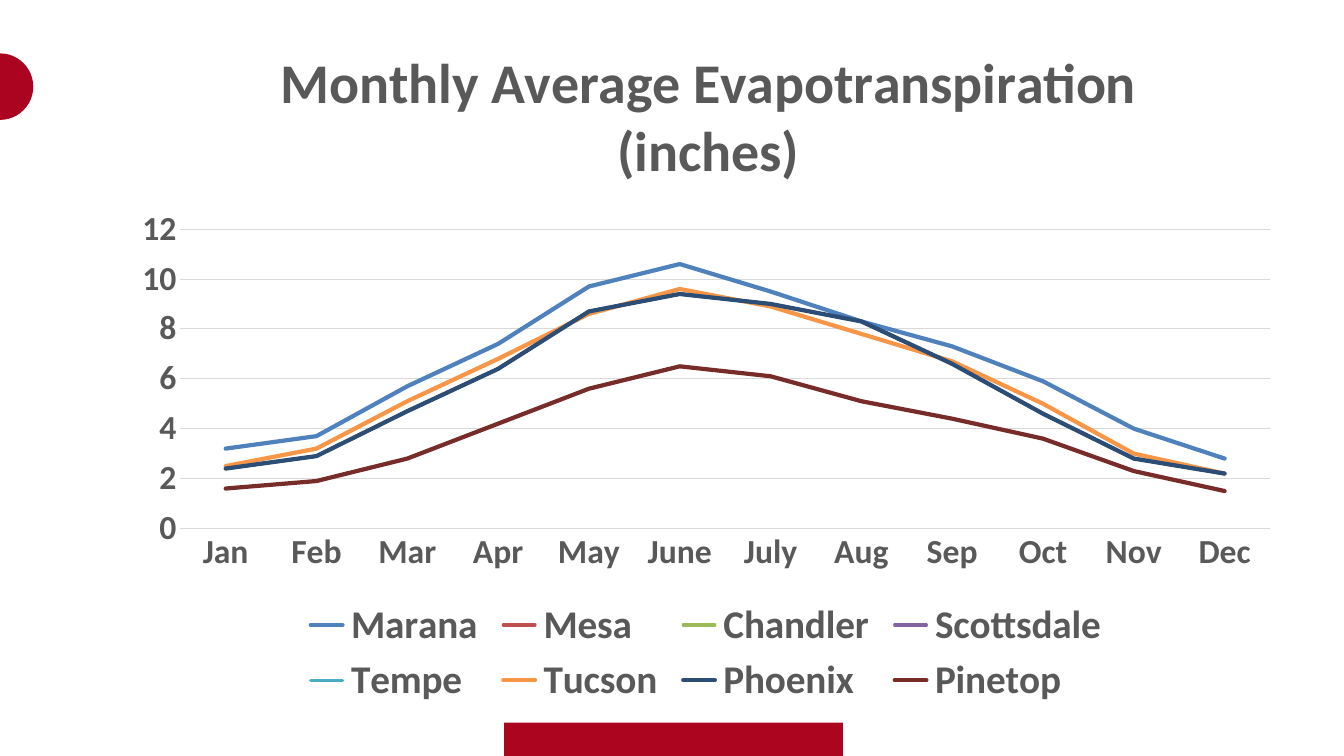
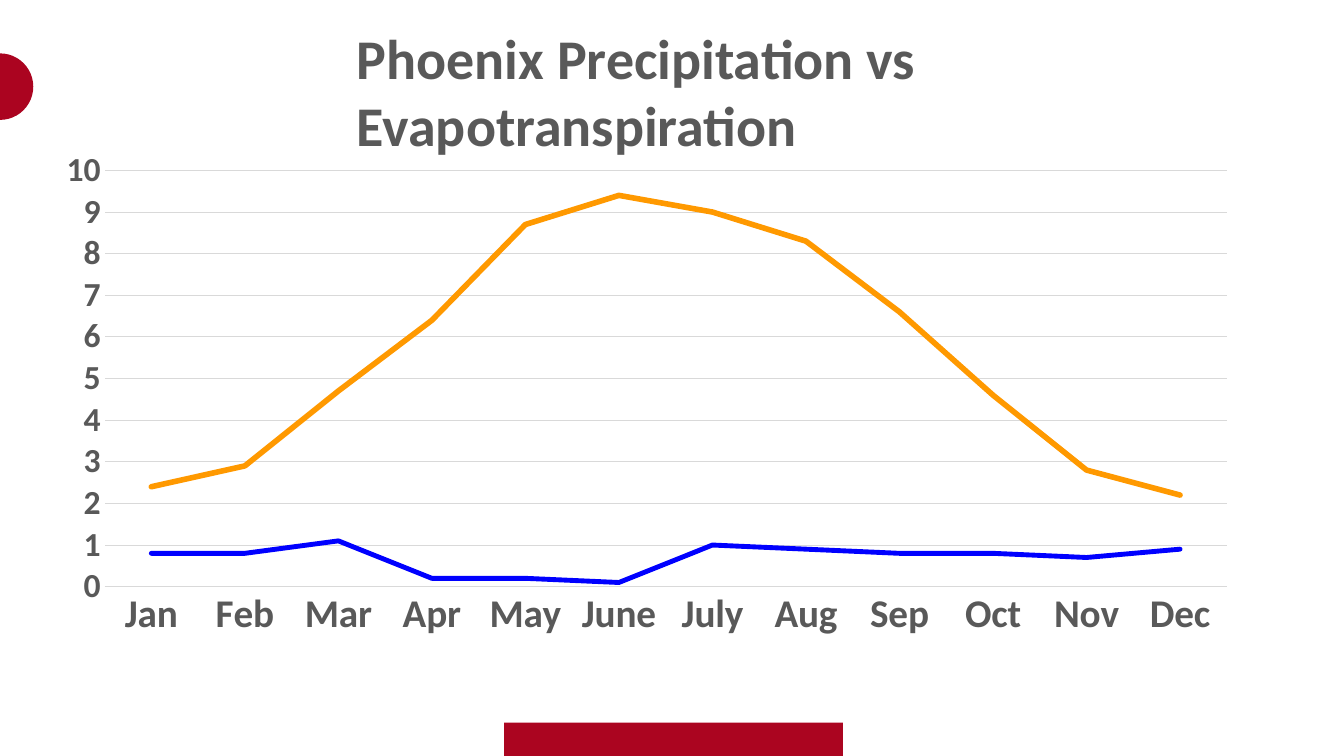
from lxml import etree
from pptx import Presentation
from pptx.chart.data import CategoryChartData
from pptx.dml.color import RGBColor
from pptx.enum.chart import XL_CHART_TYPE as ChartType, XL_LEGEND_POSITION as LegendPos
from pptx.enum.chart import XL_TICK_MARK as TickMark
from pptx.enum.shapes import MSO_SHAPE as Shape
from pptx.enum.text import MSO_ANCHOR as Anchor
from pptx.oxml.ns import qn
from pptx.util import Inches, Pt

FONT, TEXT, GRID = "Calibri", "595959", "D9D9D9"
TITLE_SIZE = 40
ACCENTS = [
    (Shape.RECTANGLE, (5, 7.17, 3.36, 0.36), "AB0520"),
    (Shape.OVAL, (-0.33, 0.53, 0.66, 0.66), "AB0420"),
]
MONTHS = ["Jan", "Feb", "Mar", "Apr", "May", "June",
          "July", "Aug", "Sep", "Oct", "Nov", "Dec"]
PHOENIX_AREA = [2.4, 2.9, 4.7, 6.4, 8.7, 9.4, 9, 8.3, 6.6, 4.6, 2.8, 2.2]

# Series: name, monthly inches, colour, line width.
# title_at and plot are shares of the chart's own size; a title too long to
# stay on one line inside the chart has a title_box in inches instead.
CHARTS = [
    dict(
        title="Monthly Average Evapotranspiration (inches)", title_at=(0.13, 0.005),
        at=(1.17, 0.31, 11.66, 6.75), plot=(0.053, 0.291, 0.927, 0.44),
        top=12, step=2, month_size=24, legend=True,
        series=[
            ("Marana", [3.2, 3.7, 5.7, 7.4, 9.7, 10.6, 9.5, 8.3, 7.3, 5.9, 4, 2.8], "4F81BD", 3),
            ("Mesa", PHOENIX_AREA, "C0504D", 2.25),
            ("Chandler", PHOENIX_AREA, "9BBB59", 2.25),
            ("Scottsdale", PHOENIX_AREA, "8064A2", 2.25),
            ("Tempe", PHOENIX_AREA, "4BACC6", 2.25),
            ("Tucson", [2.5, 3.2, 5.1, 6.8, 8.6, 9.6, 8.9, 7.8, 6.7, 5, 3, 2.2], "F79646", 3),
            ("Phoenix", PHOENIX_AREA, "2C4D75", 3),
            ("Pinetop", [1.6, 1.9, 2.8, 4.2, 5.6, 6.5, 6.1, 5.1, 4.4, 3.6, 2.3, 1.5], "772C2A", 3),
        ],
    ),
    dict(
        title="Phoenix Precipitation vs Evapotranspiration", title_box=(3.54, 0.55, 9.6, 0.7),
        at=(0.43, 0.4, 12.65, 6.76), plot=(0.048, 0.191, 0.88, 0.611),
        top=10, step=1, month_size=28, legend=False,
        series=[
            ("Evapotranspiration", PHOENIX_AREA, "FF9900", 4),
            ("Precipitations", [0.8, 0.8, 1.1, 0.2, 0.2, 0.1, 1, 0.9, 0.8, 0.8, 0.7, 0.9],
             "0000FF", 3.5),
        ],
    ),
]


def rgb(color):
    return RGBColor.from_string(color)


def set_font(font, size):
    for name, value in dict(name=FONT, size=Pt(size), bold=True).items():
        setattr(font, name, value)
    font.color.rgb = rgb(TEXT)


def set_line(line, color, width):
    line.color.rgb = rgb(color)
    line.width = Pt(width)


def place(part, shares, inner=False):
    """Give a chart part a fixed place: x, y and optionally w, h."""
    for old in part.findall(qn("c:layout")):
        part.remove(old)
    layout = etree.Element(qn("c:layout"))
    manual = etree.SubElement(layout, qn("c:manualLayout"))
    settings = [("layoutTarget", "inner")] if inner else []
    settings += [("xMode", "edge"), ("yMode", "edge")]
    settings += zip("xywh", shares)
    for tag, value in settings:
        etree.SubElement(manual, qn("c:" + tag)).set("val", str(value))
    text = part.find(qn("c:tx"))
    part.insert(0 if text is None else part.index(text) + 1, layout)


def add_accents(slide):
    for kind, at, color in ACCENTS:
        accent = slide.shapes.add_shape(kind, *map(Inches, at))
        accent.shadow.inherit = False
        accent.fill.solid()
        accent.fill.fore_color.rgb = rgb(color)
        accent.line.fill.background()


def add_title(slide, chart, info):
    boxed = "title_box" in info
    chart.has_title = not boxed
    if boxed:
        frame = slide.shapes.add_textbox(*map(Inches, info["title_box"])).text_frame
        frame.word_wrap = False
        frame.vertical_anchor = Anchor.MIDDLE
        for side in ("left", "top", "right", "bottom"):
            setattr(frame, "margin_" + side, 0)
    else:
        frame = chart.chart_title.text_frame
    frame.text = info["title"]
    set_font(frame.paragraphs[0].runs[0].font, TITLE_SIZE)
    if not boxed:
        chart.chart_title.include_in_layout = False
        place(chart.chart_title._element, info["title_at"])


def style_axes(chart, info):
    months, inches = chart.category_axis, chart.value_axis
    for axis, size in ((months, info["month_size"]), (inches, 24)):
        axis.major_tick_mark = axis.minor_tick_mark = TickMark.NONE
        set_font(axis.tick_labels.font, size)
    months.has_major_gridlines = False
    set_line(months.format.line, GRID, 0.75)
    scale = dict(minimum_scale=0, maximum_scale=info["top"], major_unit=info["step"])
    for name, value in scale.items():
        setattr(inches, name, value)
    inches.format.line.fill.background()
    set_line(inches.major_gridlines.format.line, GRID, 0.75)


def add_line_chart(slide, info):
    data = CategoryChartData()
    data.categories = MONTHS
    for name, values, *_ in info["series"]:
        data.add_series(name, values)
    chart = slide.shapes.add_chart(ChartType.LINE, *map(Inches, info["at"]), data).chart
    chart.font.name, chart.font.size = FONT, Pt(10)
    add_title(slide, chart, info)

    chart.has_legend = info["legend"]
    if chart.has_legend:
        chart.legend.position = LegendPos.BOTTOM
        chart.legend.include_in_layout = False
        set_font(chart.legend.font, 28)

    style_axes(chart, info)
    plot = chart.plots[0]
    plot.vary_by_categories = False
    for series, (_, _, color, width) in zip(plot.series, info["series"]):
        series.smooth = False
        set_line(series.format.line, color, width)
        series._element.find(".//" + qn("a:ln")).set("cap", "rnd")
    place(chart._chartSpace.find(".//" + qn("c:plotArea")), info["plot"], inner=True)


def main():
    deck = Presentation()
    deck.slide_width, deck.slide_height = Inches(13.33), Inches(7.5)
    for info in CHARTS:
        slide = deck.slides.add_slide(deck.slide_layouts[6])
        add_accents(slide)
        add_line_chart(slide, info)
    deck.save("out.pptx")


if __name__ == "__main__":
    main()
